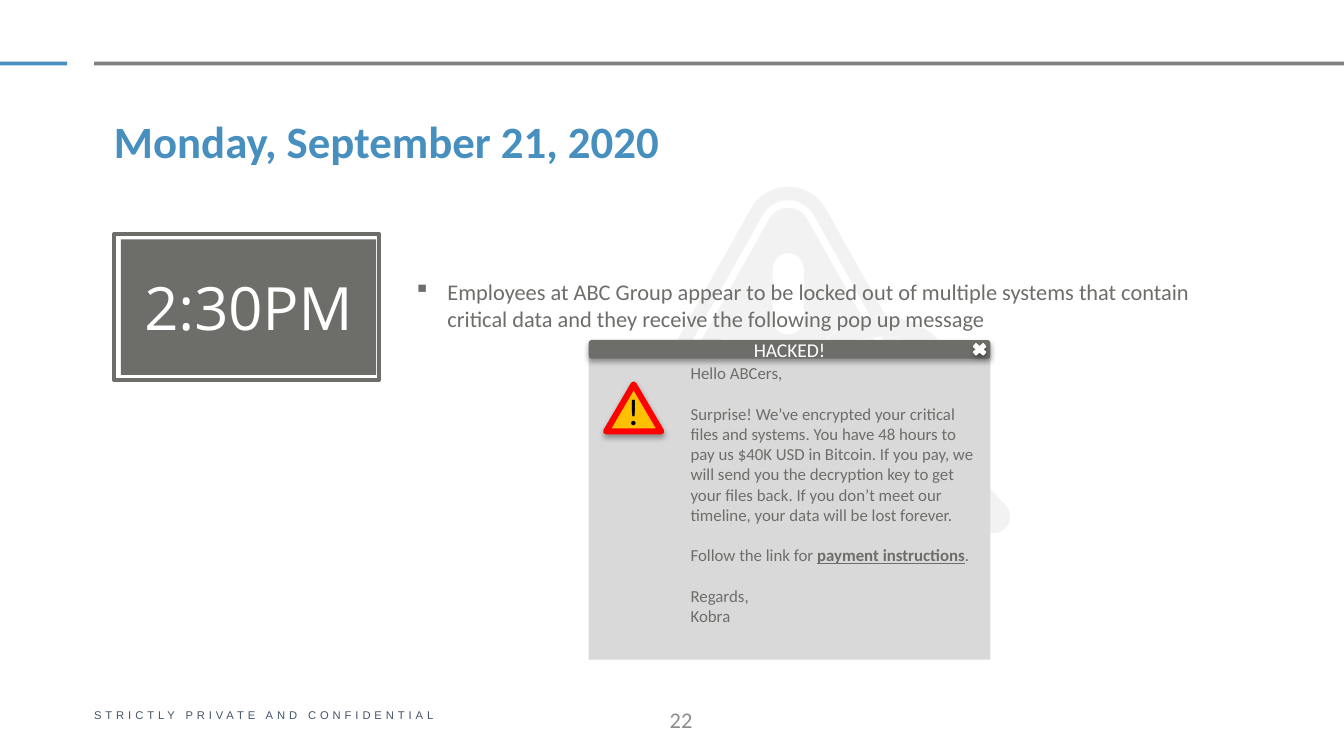
from math import atan2, cos, pi, sin, tau

from lxml import etree
from pptx import Presentation
from pptx.dml.color import RGBColor
from pptx.enum.shapes import MSO_SHAPE
from pptx.enum.text import MSO_ANCHOR, PP_ALIGN
from pptx.oxml import parse_xml
from pptx.oxml.ns import nsdecls, qn
from pptx.util import Pt

RECT, ROUNDED, DONUT = MSO_SHAPE.RECTANGLE, MSO_SHAPE.ROUNDED_RECTANGLE, MSO_SHAPE.DONUT
CROSS, TRIANGLE = MSO_SHAPE.MATH_MULTIPLY, MSO_SHAPE.ISOSCELES_TRIANGLE
TOP, MIDDLE = MSO_ANCHOR.TOP, MSO_ANCHOR.MIDDLE
LEFT, CENTER, RIGHT = PP_ALIGN.LEFT, PP_ALIGN.CENTER, PP_ALIGN.RIGHT

# Content: a paragraph is a string, or a list of (text, emphasised) runs
TITLE = "Monday, September 21, 2020"
TIME = "2:30PM"
EVENT = ("Employees at ABC Group appear to be locked out of multiple systems that "
         "contain critical data and they receive the following pop up message")
POPUP_TITLE = "HACKED!"
POPUP_BLOCKS = [
    ["Hello ABCers,"],
    ["Surprise! We’ve encrypted your critical files and systems. You have 48 hours to "
     "pay us $40K USD in Bitcoin. If you pay, we will send you the decryption key to get "
     "your files back. If you don’t meet our timeline, your data will be lost forever."],
    [[("Follow the link for ", False), ("payment instructions", True), (".", False)]],
    ["Regards,", "Kobra"],
]
FOOTER = "STRICTLY PRIVATE AND CONFIDENTIAL"
PAGE = "22"

THEME = dict(
    blue="478FBF", rule="808080", slate="6D6E6A", navy="44546A", number="8C8C8C",
    ghost="F2F2F2", panel="D9D9D9", amber="FFC000", red="FF0000",
    white="FFFFFF", black="000000",
    body_font="Calibri", clock_font="Open Sans", footer_font="Arial",
    title=24, clock=32, mark=20, body=12, bar=10.5, popup=9, footer=6,
)

# Layout, in points
W, H = 720, 396
RULE_Y, RULE_H, RULE_SPLIT, MARGIN = 33, 2, 36, 50.4
POPUP_X, POPUP_Y, POPUP_W, POPUP_H = 315.4, 190.8, 215.2, 162.7
BAR_Y, BAR_H = 182.2, 10

# Background icon: corner centres of the triangle, and radii of its nested outlines
CORNERS = [(422.3, 123.1), (469.4, 207.4), (375.1, 207.4)]
OUTLINES = (23, 15.8, 11.7)
MARK_BAR, MARK_DOT, MARK_R = [(422.3, 144), (422.3, 171)], [(422.3, 195.8)], 8.3
HANDLE, HANDLE_R = [(507, 250.2), (532.2, 276.8)], 8.9


def rgb(name):
    return RGBColor.from_string(THEME[name])


def paint(sp, fill=None, line=None, width=1, shadow=False):
    sp.shadow.inherit = False
    if fill:
        sp.fill.solid()
        sp.fill.fore_color.rgb = rgb(fill)
    else:
        sp.fill.background()
    if line:
        sp.line.color.rgb = rgb(line)
        sp.line.width = Pt(width)
    else:
        sp.line.fill.background()
    if shadow:
        effects = sp._element.spPr.find(qn("a:effectLst"))
        effects.append(parse_xml(
            f'<a:outerShdw {nsdecls("a")} blurRad="{Pt(3.1)}" dist="{Pt(1.8)}" '
            f'dir="5400000" rotWithShape="0"><a:srgbClr val="{THEME["black"]}">'
            '<a:alpha val="35000"/></a:srgbClr></a:outerShdw>'))
    return sp


def shape(s, kind, x, y, w, h, **look):
    return paint(s.shapes.add_shape(kind, Pt(x), Pt(y), Pt(w), Pt(h)), **look)


def textbox(s, x, y, w, h):
    return s.shapes.add_textbox(Pt(x), Pt(y), Pt(w), Pt(h))


def write(sp, *paragraphs, size, color, font="body_font", bold=False, align=LEFT,
          anchor=TOP, wrap=True, inset=(7.2, 3.6), indent=0, bullet=None,
          gaps=None, line_spacing=None, tracking=None):
    """Fill sp with text; gaps maps a paragraph index to its space before."""
    tf = sp.text_frame
    tf.word_wrap, tf.vertical_anchor = wrap, anchor
    tf.margin_left = tf.margin_right = Pt(inset[0])
    tf.margin_top = tf.margin_bottom = Pt(inset[1])
    for i, content in enumerate(paragraphs):
        p = tf.paragraphs[0] if i == 0 else tf.add_paragraph()
        p.alignment = align
        pPr = p._p.get_or_add_pPr()
        pPr.set("marL", str(Pt(indent)))
        if gaps and i in gaps:
            p.space_before = Pt(gaps[i])
        if line_spacing:
            p.line_spacing = line_spacing
        if bullet:
            pPr.set("indent", str(-Pt(indent)))
            etree.SubElement(pPr, qn("a:buChar")).set("char", bullet)
        runs = [(content, False)] if isinstance(content, str) else content
        for text, emphasised in runs:
            r = p.add_run()
            r.text = text
            r.font.name, r.font.size = THEME[font], Pt(THEME[size])
            r.font.color.rgb = rgb(color)
            r.font.bold = bold or emphasised
            r.font.underline = emphasised
            if tracking:
                r._r.get_or_add_rPr().set("spc", str(tracking))


def rounded_outline(centres, radius, steps=16):
    """Points around circles of one radius, centres given clockwise."""
    points, n = [], len(centres)
    for i, (x, y) in enumerate(centres):
        px, py = centres[i - 1]
        nx, ny = centres[(i + 1) % n]
        start = atan2(y - py, x - px)
        sweep = (atan2(ny - y, nx - x) - start) % tau or tau
        for k in range(steps + 1):
            a = start - pi / 2 + sweep * k / steps
            points.append((Pt(x + radius * cos(a)), Pt(y + radius * sin(a))))
    return points


def freeform(s, outlines, **look):
    first, *rest = [rounded_outline(*o) for o in outlines]
    builder = s.shapes.build_freeform(*first[0])
    builder.add_line_segments(first[1:], close=True)
    for points in rest:
        builder.move_to(*points[0])
        builder.add_line_segments(points[1:], close=True)
    return paint(builder.convert_to_shape(), **look)


prs = Presentation()
prs.slide_width, prs.slide_height = Pt(W), Pt(H)
s = prs.slides.add_slide(prs.slide_layouts[6])

# Header rules and footer
shape(s, RECT, 0, RULE_Y, RULE_SPLIT, RULE_H, fill="blue")
shape(s, RECT, MARGIN, RULE_Y, W - MARGIN, RULE_H, fill="rule")
write(textbox(s, MARGIN, 375.8, 220, 14.4), FOOTER, size="footer", color="navy",
      font="footer_font", anchor=MIDDLE, wrap=False, inset=(0, 0),
      line_spacing=1.1, tracking=210)

# Background icon: warning sign under a magnifier
freeform(s, [(CORNERS, radius) for radius in OUTLINES]
         + [(MARK_BAR, MARK_R), (MARK_DOT, MARK_R)], fill="ghost")
lens = shape(s, DONUT, 429.1, 169.2, 87.1, 91.4, fill="ghost", line="white", width=0.25)
lens.adjustments[0] = 0.13
freeform(s, [(HANDLE, HANDLE_R)], fill="ghost")

# Event
write(textbox(s, 214.6, 145.4, 442.8, 36), EVENT, size="body", color="slate",
      indent=18, bullet="▪")

# Pop-up message
lines, gaps = [], {}
for block in POPUP_BLOCKS:
    if lines:
        gaps[len(lines)] = 11
    lines += block
write(shape(s, RECT, POPUP_X, POPUP_Y, POPUP_W, POPUP_H, fill="panel"), *lines,
      size="popup", color="slate", indent=47.5, gaps=gaps)
write(shape(s, ROUNDED, POPUP_X, BAR_Y, POPUP_W, BAR_H, fill="slate", shadow=True),
      POPUP_TITLE, size="bar", color="white", align=CENTER, anchor=MIDDLE, inset=(7.2, 0))
shape(s, CROSS, 519.8, 182.9, 10, 8.6, fill="white", line="white", width=0.75, shadow=True)
shape(s, TRIANGLE, 324.7, 206, 29.5, 25.2, fill="amber", line="red", width=3.25, shadow=True)
write(textbox(s, 329, 204.5, 25.2, 31.7), "!", size="mark", color="black")

# Clock
write(shape(s, RECT, 64.8, 128.2, 136.8, 72.7, fill="slate"), TIME, size="clock",
      color="white", font="clock_font", align=CENTER, anchor=MIDDLE)
shape(s, RECT, 61.2, 125.3, 141.8, 78.5, line="slate", width=2)

# Title and page number
write(textbox(s, 54, 54.7, 609.8, 28.8), TITLE, size="title", color="blue", bold=True,
      line_spacing=1.1)
write(textbox(s, 216, 375.1, 162, 20.9), PAGE, size="body", color="number",
      align=RIGHT, anchor=MIDDLE)

prs.save("out.pptx")
